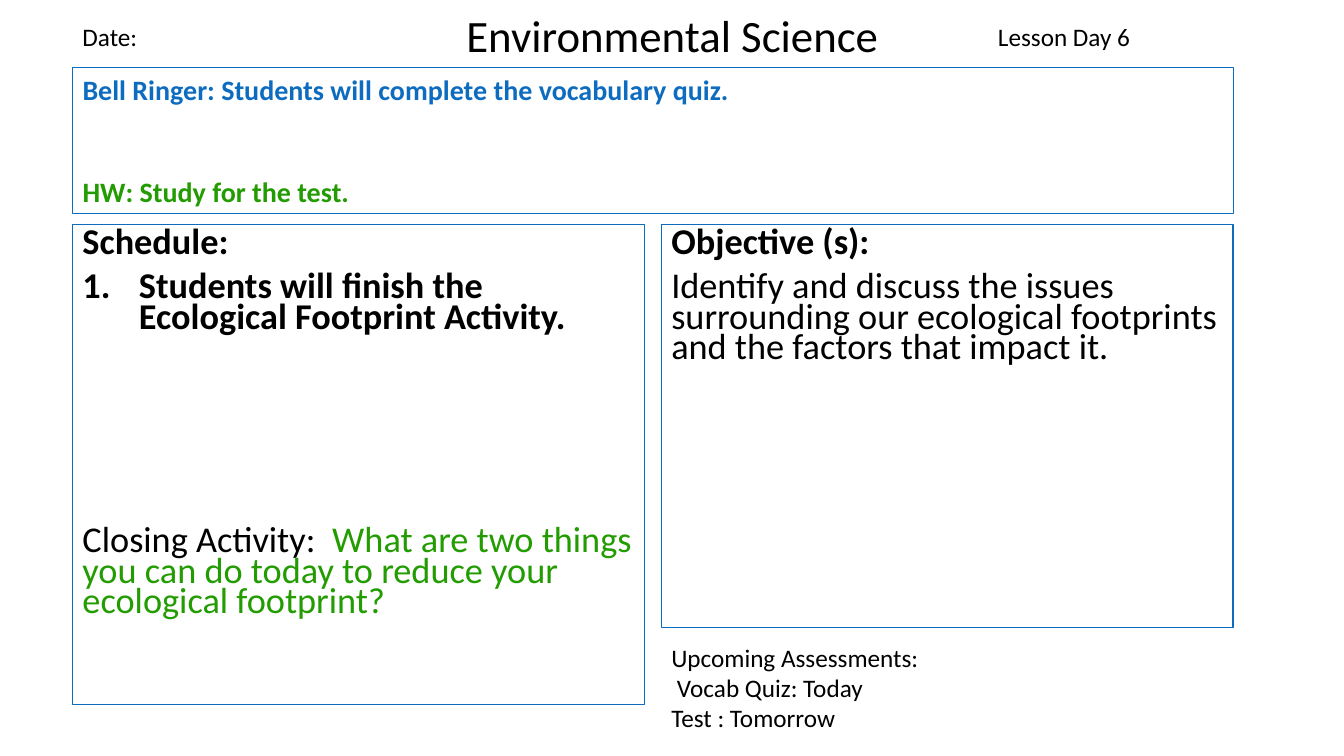
import pptx
import pptx.util
import pptx.dml.color
import pptx.enum.shapes
import pptx.enum.text
from lxml import etree

Inches, Pt = pptx.util.Inches, pptx.util.Pt
RGB = pptx.dml.color.RGBColor
BLACK = RGB(0x00, 0x00, 0x00)
BLUE = RGB(0x0D, 0x6C, 0xBF)
GREEN = RGB(0x22, 0x9C, 0x00)
FONT = "Calibri"

# Each paragraph: (space before in points, numbered, [(text, bold, colour), ...])
TITLE = [(0, False, [("Environmental Science", False, BLACK)])]
DATE = [(0, False, [("Date:", False, BLACK)])]
LESSON = [(0, False, [("Lesson Day 6", False, BLACK)])]
BELL = [
    (0, False, [("Bell Ringer: Students will complete the vocabulary quiz.", True, BLUE)]),
    (48.8, False, [("HW: Study for the test.", True, GREEN)]),
]
PLAN = [
    (10, False, [("Schedule:", True, BLACK)]),
    (10, True, [("Students will finish the Ecological Footprint Activity.", True, BLACK)]),
    (138, False, [
        ("Closing Activity:  ", False, BLACK),
        ("What are two things you can do today to reduce your ecological footprint?",
         False, GREEN),
    ]),
]
GOALS = [
    (10, False, [("Objective (s):", True, BLACK)]),
    (10, False, [("Identify and discuss the issues surrounding our ecological "
                  "footprints and the factors that impact it.", False, BLACK)]),
]
TESTS = [
    (0, False, [(line, False, BLACK)])
    for line in ("Upcoming Assessments:", " Vocab Quiz: Today", "Test : Tomorrow")
]

# Two equal columns, with the bell ringer across both
LEFT, COL, GAP = 0.72, 5.67, 0.17
RIGHT = LEFT + COL + GAP
FULL = 2 * COL + GAP
HEAD, BAND, BODY = 0.16, 0.67, 2.23

FRAMES = [  # at, size, line spacing, paragraphs
    ((LEFT, BODY, COL, 4.76), 25.9, 0.7, PLAN),
    ((RIGHT, BODY, COL, 4), 25.9, 0.7, GOALS),
    ((LEFT, BAND, FULL, 1.45), 20, 1, BELL),
]
NOTES = [
    ((LEFT, HEAD, 3.47, 0.4), DATE),
    ((9.8, HEAD, 2.23, 0.4), LESSON),
    ((RIGHT, 6.32, COL, 1.01), TESTS),
]


def number(para):
    """Make the paragraph a numbered item with a hanging indent."""
    props = para._p.get_or_add_pPr()
    props.set("marL", str(Inches(0.56)))
    props.set("indent", str(-Inches(0.56)))
    tag = pptx.oxml.ns.qn("a:buAutoNum")
    etree.SubElement(props, tag, type="arabicPeriod")


def write(shape, paras, size, pitch=1, align=pptx.enum.text.PP_ALIGN.LEFT):
    frame = shape.text_frame
    frame.word_wrap = True
    frame.auto_size = pptx.enum.text.MSO_AUTO_SIZE.NONE
    frame.vertical_anchor = pptx.enum.text.MSO_ANCHOR.TOP
    for i, (before, listed, runs) in enumerate(paras):
        para = frame.add_paragraph() if i else frame.paragraphs[0]
        para.alignment = align
        para.line_spacing = float(pitch)
        para.space_before = Pt(before)
        if listed:
            number(para)
        for text, bold, color in runs:
            run = para.add_run()
            run.text = text
            run.font.name = FONT
            run.font.size = Pt(size)
            run.font.bold = bold
            run.font.color.rgb = color


def main():
    deck = pptx.Presentation()
    deck.slide_width, deck.slide_height = Inches(13.33), Inches(7.5)
    slide = deck.slides.add_slide(deck.slide_layouts[5])
    shapes = slide.shapes

    title = shapes.title
    title.left, title.top = Inches(4.2), Inches(0.03)
    title.width, title.height = Inches(4.94), Inches(0.64)
    write(title, TITLE, 32, align=pptx.enum.text.PP_ALIGN.CENTER)

    for at, size, pitch, paras in FRAMES:
        box = shapes.add_shape(pptx.enum.shapes.MSO_SHAPE.RECTANGLE, *map(Inches, at))
        box.shadow.inherit = False
        box.fill.background()
        box.line.color.rgb = BLUE
        box.line.width = Pt(0.75)
        write(box, paras, size, pitch)

    for at, paras in NOTES:
        write(shapes.add_textbox(*map(Inches, at)), paras, 18)

    deck.save("out.pptx")


if __name__ == "__main__":
    main()
